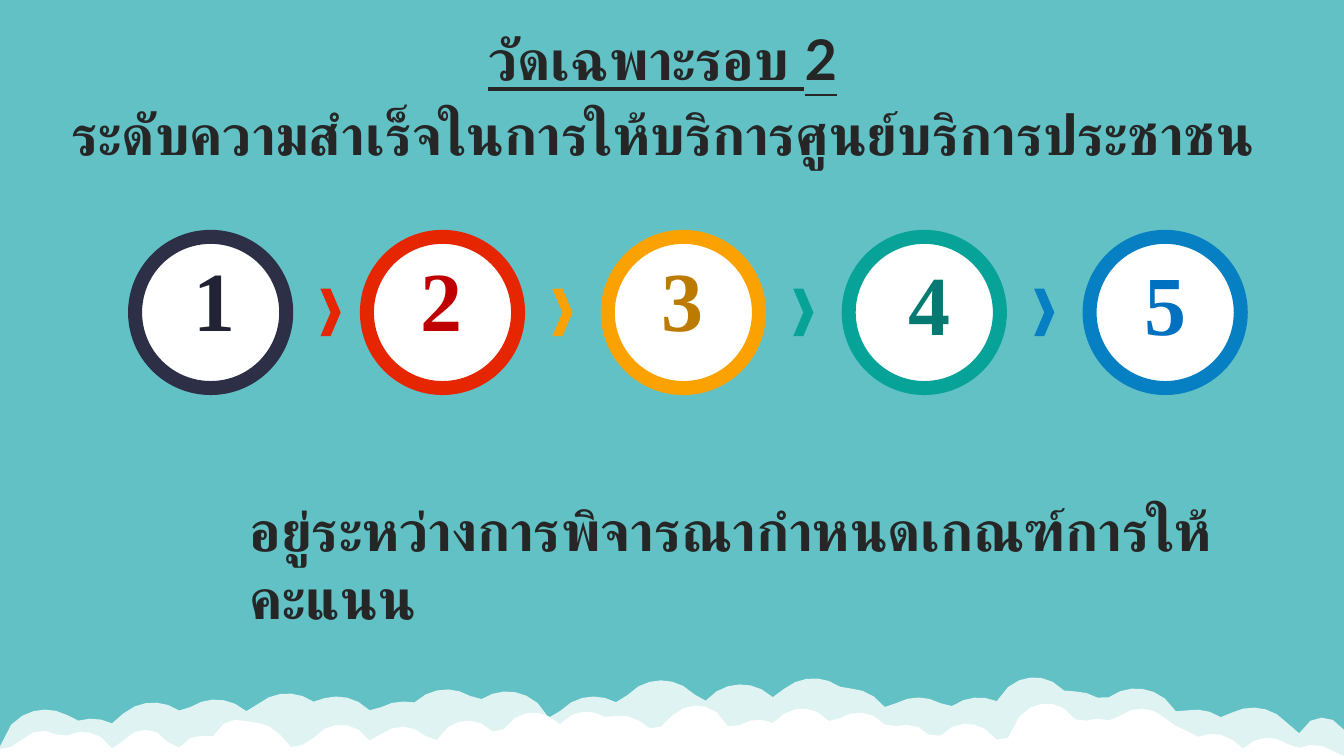
from dataclasses import dataclass
from math import sqrt

from pptx import Presentation
from pptx.dml.color import RGBColor
from pptx.enum.shapes import MSO_SHAPE
from pptx.enum.text import MSO_ANCHOR, PP_ALIGN
from pptx.slide import Slide
from pptx.text.text import Font
from pptx.util import Inches, Pt

# The grid has 160 columns and 90 rows of equal square cells.
COLUMNS, ROWS = 160, 90
CELL = Inches(7.5) / ROWS

SKY = RGBColor(0x62, 0xC1, 0xC5)
PALE_CLOUD = RGBColor(0xE0, 0xF3, 0xF3)
WHITE = RGBColor(0xFF, 0xFF, 0xFF)
INK = RGBColor(0x26, 0x26, 0x26)
NAVY, DARK_NAVY = RGBColor(0x2C, 0x2F, 0x45), RGBColor(0x21, 0x23, 0x34)
RED, DARK_RED = RGBColor(0xE6, 0x26, 0x01), RGBColor(0xC0, 0x00, 0x00)
AMBER, DARK_AMBER = RGBColor(0xFB, 0xA2, 0x00), RGBColor(0xBC, 0x7A, 0x00)
GREEN, DARK_GREEN = RGBColor(0x07, 0xA3, 0x98), RGBColor(0x05, 0x7A, 0x72)
BLUE, DARK_BLUE = RGBColor(0x06, 0x80, 0xC3), RGBColor(0x00, 0x70, 0xC0)

RING_TOP, RING_SIZE = 28.2, 18
FIRST_RING, SECOND_RING, RING_STEP = 16.08, 43.68, 28.68
CHEVRON_OFFSET, CHEVRON_WIDTH, CHEVRON_HEIGHT = 22.08, 2.4, 5.64
CLOUD_STEPS = 120


@dataclass(frozen=True)
class Level:
    ring_color: RGBColor
    digit_color: RGBColor
    digit_offset: float
    digit_top: float


@dataclass(frozen=True)
class Puff:
    """One round cloud bump: its middle, its peak and its radius in inches."""
    middle: float
    peak: float
    radius: float

    def height_at(self, x: float) -> float:
        reach = self.radius ** 2 - (x - self.middle) ** 2
        return self.peak + self.radius - sqrt(reach) if reach > 0 else 7.5


LEVELS = [
    Level(NAVY, DARK_NAVY, 5.76, 28.92),
    Level(RED, DARK_RED, 5.16, 28.92),
    Level(AMBER, DARK_AMBER, 5.16, 28.92),
    Level(GREEN, DARK_GREEN, 5.88, 29.4),
    Level(BLUE, DARK_BLUE, 5.4, 29.4),
]

BACK_PUFFS = [Puff(middle, peak, 0.46) for middle, peak in [
    (0.45, 7.04), (0.91, 7.13), (1.52, 6.97), (2.14, 6.94), (2.85, 6.88),
    (3.34, 6.91), (4, 6.96), (4.43, 6.84), (5.03, 6.86), (5.89, 6.91),
    (6.56, 6.75), (7.35, 6.79), (8.07, 6.73), (8.41, 6.83), (9.11, 6.92),
    (9.71, 6.92), (10.66, 6.86), (11.27, 6.83), (11.86, 7.04), (12.43, 7.02),
]] + [Puff(10.26, 6.72, 0.4), Puff(13.12, 7.12, 0.25)]

FRONT_PUFFS = [Puff(middle, peak, 0.27) for middle, peak in [
    (0.1, 7.41), (0.42, 7.25), (1.44, 7.24), (2, 7.3), (2.36, 7.14),
]] + [Puff(middle, peak, 0.34) for middle, peak in [
    (0.82, 7.26), (2.52, 7.17), (3.01, 7.39), (3.38, 7.19), (3.99, 7.21),
    (4.64, 7.15), (5.29, 7.07), (5.82, 7.06), (6.16, 7.1), (6.54, 7.21),
    (6.91, 7), (7.52, 7.14), (7.96, 7.03), (8.52, 7.07), (8.98, 7.19),
    (9.59, 7.18), (10, 7.32), (10.38, 6.98), (10.89, 7.13), (11.32, 7.03),
    (11.58, 7.19), (12.03, 7.28), (12.58, 7.32), (13.03, 7.39),
]]


def cells(count: float) -> int:
    return round(count * CELL)


def place(left: float, top: float, width: float, height: float) -> tuple[int, ...]:
    return cells(left), cells(top), cells(width), cells(height)


def style(font: Font, name: str, size: float, color: RGBColor) -> None:
    font.name, font.size, font.bold = name, Pt(size), True
    font.color.rgb = color


def draw_cloud(page: Slide, puffs: list[Puff], color: RGBColor) -> None:
    """Fill the area below the upper outline of all puffs."""
    outline = []
    for step in range(CLOUD_STEPS + 1):
        x = cells(COLUMNS * step / CLOUD_STEPS)
        y = min(puff.height_at(x / Inches(1)) for puff in puffs)
        outline.append((x, Inches(y)))
    bottom = cells(ROWS)
    builder = page.shapes.build_freeform(0, bottom, scale=1.0)
    builder.add_line_segments([*outline, (cells(COLUMNS), bottom)], close=True)
    cloud = builder.convert_to_shape()
    cloud.shadow.inherit = False
    cloud.fill.solid()
    cloud.fill.fore_color.rgb = color
    cloud.line.fill.background()


def draw_title(page: Slide) -> None:
    title = page.shapes.title
    title.left, title.top, title.width, title.height = place(0, 2, 157.8, 18.5)
    frame = title.text_frame
    frame.text = "วัดเฉพาะรอบ 2\nระดับความสำเร็จในการให้บริการศูนย์บริการประชาชน"
    frame.word_wrap = True
    frame.vertical_anchor = MSO_ANCHOR.BOTTOM
    for para in frame.paragraphs:
        para.alignment = PP_ALIGN.CENTER
        para.line_spacing = 0.9
        para.space_before = Pt(10)
        style(para.runs[0].font, "Lato", 40, INK)
    frame.paragraphs[0].runs[0].font.underline = True


def draw_text(page: Slide, text: str, area: tuple[int, ...], name: str,
              size: float, color: RGBColor) -> None:
    box = page.shapes.add_textbox(*area)
    box.text_frame.word_wrap = True
    box.text_frame.text = text
    style(box.text_frame.paragraphs[0].runs[0].font, name, size, color)


def draw_level(page: Slide, index: int, level: Level) -> None:
    """Draw a numbered ring, and the chevron leading to the next one."""
    left = SECOND_RING + (index - 1) * RING_STEP if index else FIRST_RING
    ring = page.shapes.add_shape(
        MSO_SHAPE.OVAL, *place(left, RING_TOP, RING_SIZE, RING_SIZE))
    ring.shadow.inherit = False
    ring.fill.solid()
    ring.fill.fore_color.rgb = WHITE
    ring.line.color.rgb = level.ring_color
    ring.line.width = Pt(10)
    draw_text(page, str(index + 1),
              place(left + level.digit_offset, level.digit_top, 9.84, 13.32),
              "Times New Roman", 60, level.digit_color)
    if index + 1 < len(LEVELS):
        top = RING_TOP + (RING_SIZE - CHEVRON_HEIGHT) / 2
        chevron = page.shapes.add_shape(
            MSO_SHAPE.CHEVRON,
            *place(left + CHEVRON_OFFSET, top, CHEVRON_WIDTH, CHEVRON_HEIGHT))
        chevron.shadow.inherit = False
        chevron.fill.solid()
        chevron.fill.fore_color.rgb = LEVELS[index + 1].ring_color
        chevron.line.fill.background()


def main() -> None:
    deck = Presentation()
    deck.slide_width, deck.slide_height = cells(COLUMNS), cells(ROWS)
    page = deck.slides.add_slide(deck.slide_layouts[5])
    page.background.fill.solid()
    page.background.fill.fore_color.rgb = SKY
    draw_cloud(page, BACK_PUFFS, PALE_CLOUD)
    draw_cloud(page, FRONT_PUFFS, WHITE)
    draw_title(page)
    for index, level in enumerate(LEVELS):
        draw_level(page, index, level)
    draw_text(page, "อยู่ระหว่างการพิจารณากำหนดเกณฑ์การให้คะแนน",
              place(28.56, 58.44, 119.04, 9.24), "Lato", 40, INK)
    deck.save("out.pptx")


if __name__ == "__main__":
    main()
